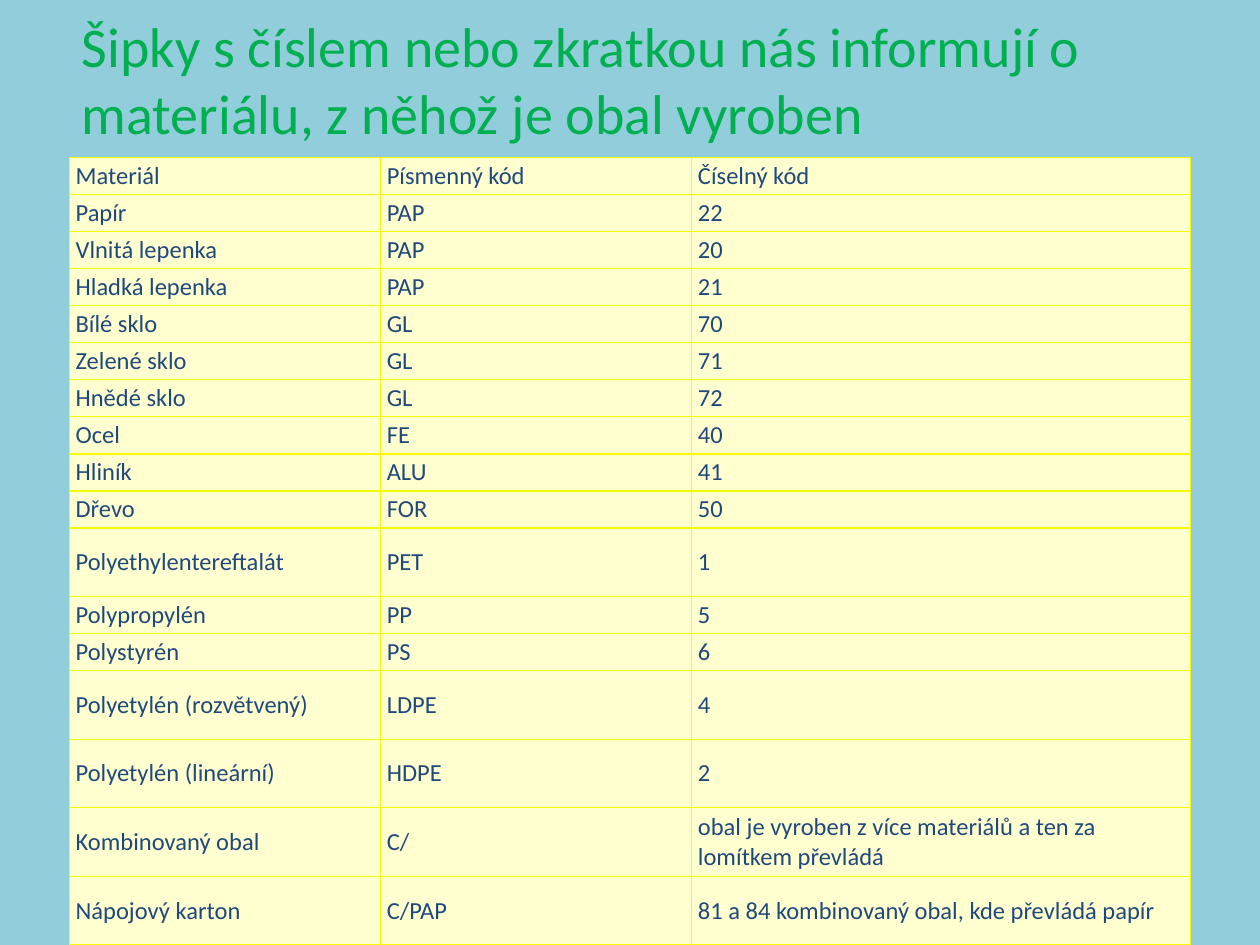
from typing import NamedTuple

from pptx import Presentation, util as u
from pptx.dml.color import RGBColor
from pptx.enum import text as t
from pptx.oxml import ns
from lxml import etree

FONT = "Calibri"
SKY, GREEN, NAVY = "92CDDC", "00B050", "1F497D"
CREAM, YELLOW = "FFFFD0", "F9F900"
LEFT, TOP, HIGH = 0.55, 1.25, 6.25
WIDTHS = (2.47, 2.47, 3.96)
EXTRA = 0.25  # what a tall row has over a plain one


class Row(NamedTuple):
    name: str
    code: str
    number: str
    tall: bool = False


ROWS = [
    Row("Materiál", "Písmenný kód", "Číselný kód"),
    Row("Papír", "PAP", "22"),
    Row("Vlnitá lepenka", "PAP", "20"),
    Row("Hladká lepenka", "PAP", "21"),
    Row("Bílé sklo", "GL", "70"),
    Row("Zelené sklo", "GL", "71"),
    Row("Hnědé sklo", "GL", "72"),
    Row("Ocel", "FE", "40"),
    Row("Hliník", "ALU", "41"),
    Row("Dřevo", "FOR", "50"),
    Row("Polyethylentereftalát", "PET", "1", True),
    Row("Polypropylén", "PP", "5"),
    Row("Polystyrén", "PS", "6"),
    Row("Polyetylén (rozvětvený)", "LDPE", "4", True),
    Row("Polyetylén (lineární)", "HDPE", "2", True),
    Row("Kombinovaný obal", "C/",
        "obal je vyroben z více materiálů a ten za lomítkem převládá", True),
    Row("Nápojový karton", "C/PAP",
        "81 a 84 kombinovaný obal, kde převládá papír", True),
]


def paint(fill, color: str) -> None:
    fill.solid()
    fill.fore_color.rgb = RGBColor.from_string(color)


def write(frame, words: str, *, size: float, color: str) -> None:
    frame.word_wrap = True
    para = frame.paragraphs[0]
    para.alignment = t.PP_ALIGN.LEFT
    run = para.add_run()
    run.text = words
    run.font.name = FONT
    run.font.size = u.Pt(size)
    run.font.color.rgb = RGBColor.from_string(color)


def edge(cell, color: str, width: float) -> None:
    """Draw all four borders; they must come before the fill."""
    props = cell._tc.get_or_add_tcPr()
    for place, side in enumerate(("lnL", "lnR", "lnT", "lnB")):
        line = etree.Element(ns.qn(f"a:{side}"), w=str(u.Pt(width)))
        solid = etree.SubElement(line, ns.qn("a:solidFill"))
        etree.SubElement(solid, ns.qn("a:srgbClr"), val=color)
        props.insert(place, line)


def fill_cell(cell, words: str) -> None:
    cell.margin_left = cell.margin_right = u.Inches(0.05)
    cell.margin_top = cell.margin_bottom = u.Inches(0.02)
    cell.vertical_anchor = t.MSO_ANCHOR.MIDDLE
    paint(cell.fill, CREAM)
    edge(cell, YELLOW, 0.75)
    write(cell.text_frame, words, size=14, color=NAVY)


def add_title(slide, words: str) -> None:
    box = slide.shapes.add_textbox(
        u.Inches(LEFT), u.Inches(0), u.Inches(9), u.Inches(TOP))
    box.text_frame.vertical_anchor = t.MSO_ANCHOR.MIDDLE
    write(box.text_frame, words, size=32, color=GREEN)


def add_codes(slide, rows: list[Row]) -> None:
    table = slide.shapes.add_table(
        len(rows), len(WIDTHS), u.Inches(LEFT), u.Inches(TOP),
        u.Inches(sum(WIDTHS)), u.Inches(HIGH)).table
    table.first_row = table.horz_banding = False
    for col, width in zip(table.columns, WIDTHS):
        col.width = u.Inches(width)
    plain = (HIGH - EXTRA * sum(row.tall for row in rows)) / len(rows)
    for line, row in zip(table.rows, rows):
        line.height = u.Inches(plain + EXTRA * row.tall)
        for cell, words in zip(line.cells, row[:3]):
            fill_cell(cell, words)


def main() -> None:
    deck = Presentation()
    deck.slide_width, deck.slide_height = u.Inches(10), u.Inches(7.5)
    slide = deck.slides.add_slide(deck.slide_layouts[6])
    paint(slide.background.fill, SKY)

    # Heading
    add_title(slide, "Šipky s číslem nebo zkratkou nás informují o "
                     "materiálu, z něhož je obal vyroben")
    # Table of recycling codes
    add_codes(slide, ROWS)
    deck.save("out.pptx")


if __name__ == "__main__":
    main()
